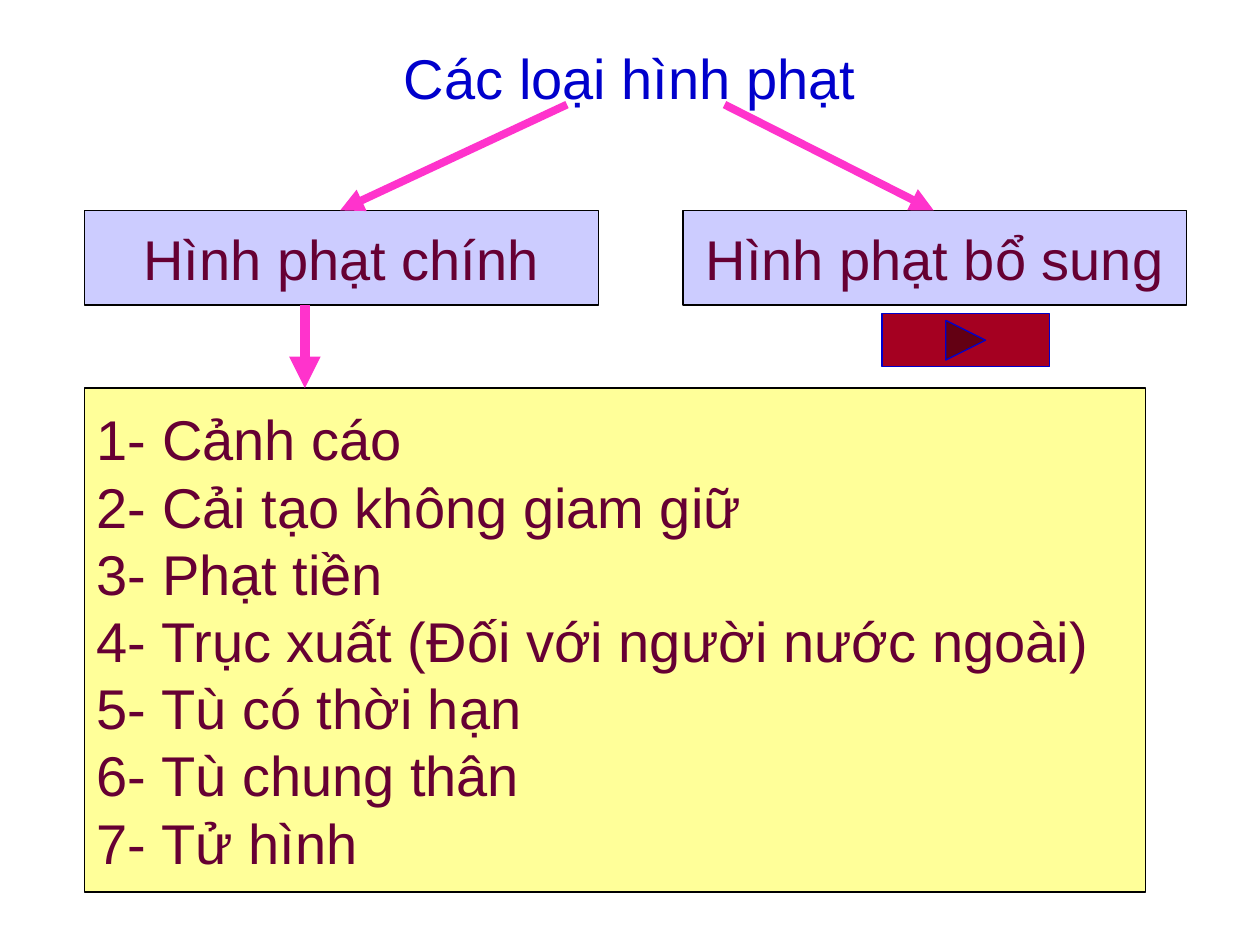
from dataclasses import dataclass

from lxml import etree
from pptx import Presentation
from pptx.dml.color import RGBColor
from pptx.enum import shapes, text
from pptx.oxml import ns
from pptx.util import Inches, Pt


@dataclass(frozen=True)
class Theme:
    """Colours and type sizes of the slide."""
    font: str = "Arial"
    size: int = 32
    title: str = "0000CC"
    body: str = "660033"
    branch: str = "CCCCFF"
    penalties: str = "FFFF99"
    border: str = "000000"
    arrow: str = "FF33CC"
    button: str = "A50021"


THEME = Theme()
PENALTIES = (
    "Cảnh cáo",
    "Cải tạo không giam giữ",
    "Phạt tiền",
    "Trục xuất (Đối với người nước ngoài)",
    "Tù có thời hạn",
    "Tù chung thân",
    "Tử hình",
)


def write(frame, lines, color=THEME.body, align=text.PP_ALIGN.CENTER, wrap=False):
    """Fill a text frame with one formatted paragraph per line."""
    frame.word_wrap = wrap
    frame.auto_size = text.MSO_AUTO_SIZE.NONE
    frame.vertical_anchor = text.MSO_ANCHOR.MIDDLE
    for index, line in enumerate(lines):
        paragraph = frame.add_paragraph() if index else frame.paragraphs[0]
        paragraph.alignment = align
        run = paragraph.add_run()
        run.text = line
        run.font.name = THEME.font
        run.font.size = Pt(THEME.size)
        run.font.color.rgb = RGBColor.from_string(color)


def add_panel(slide, box, fill, border=THEME.border, kind=shapes.MSO_SHAPE.RECTANGLE):
    """Draw a filled, thinly outlined shape in the box."""
    panel = slide.shapes.add_shape(kind, *map(Inches, box))
    panel.shadow.inherit = False
    panel.fill.solid()
    panel.fill.fore_color.rgb = RGBColor.from_string(fill)
    panel.line.color.rgb = RGBColor.from_string(border)
    panel.line.width = Pt(0.75)
    return panel


def add_arrow(slide, start, end, width=4.5):
    """Draw an arrow that points at its end."""
    arrow = slide.shapes.add_connector(
        shapes.MSO_CONNECTOR.STRAIGHT, *map(Inches, (*start, *end)))
    arrow.line.color.rgb = RGBColor.from_string(THEME.arrow)
    arrow.line.width = Pt(width)
    etree.SubElement(arrow.line._get_or_add_ln(), ns.qn("a:tailEnd"), type="triangle")
    etree.SubElement(arrow._element.spPr, ns.qn("a:effectLst"))


def add_title(slide, box):
    """Place and format the slide title."""
    title = slide.shapes.title
    title.left, title.top, title.width, title.height = map(Inches, box)
    write(title.text_frame, ["Các loại hình phạt"], color=THEME.title, wrap=True)


def add_penalties(slide, box):
    """List the numbered main penalties."""
    panel = add_panel(slide, box, THEME.penalties)
    lines = [f"{number}- {name}" for number, name in enumerate(PENALTIES, 1)]
    write(panel.text_frame, lines, align=text.PP_ALIGN.LEFT)


def add_branch(slide, box, label, source):
    """Draw one kind of penalty and the arrow leading to it."""
    left, top, width, _ = box
    write(add_panel(slide, box, THEME.branch).text_frame, [label])
    add_arrow(slide, source, (round(left + width / 2 - 0.01, 2), top))


def build():
    """Build and save the slide."""
    deck = Presentation()
    deck.slide_width, deck.slide_height = Inches(10), Inches(7.5)
    slide = deck.slides.add_slide(deck.slide_layouts[5])
    main = (0.67, 1.67, 4.08, 0.75)
    extra = (5.42, 1.67, 4, 0.75)
    penalties = (0.67, 3.08, 8.42, 4)
    add_title(slide, (0.5, 0.3, 9, 0.62))
    add_penalties(slide, penalties)
    add_branch(slide, main, "Hình phạt chính", (4.5, 0.83))
    add_branch(slide, extra, "Hình phạt bổ sung", (5.75, 0.83))
    add_arrow(slide, (2.42, main[1] + main[3]), (2.42, penalties[1]), width=6)
    add_panel(slide, (7, 2.49, 1.33, 0.42), THEME.button, THEME.title,
              shapes.MSO_SHAPE.ACTION_BUTTON_FORWARD_OR_NEXT)
    deck.save("out.pptx")


if __name__ == "__main__":
    build()
